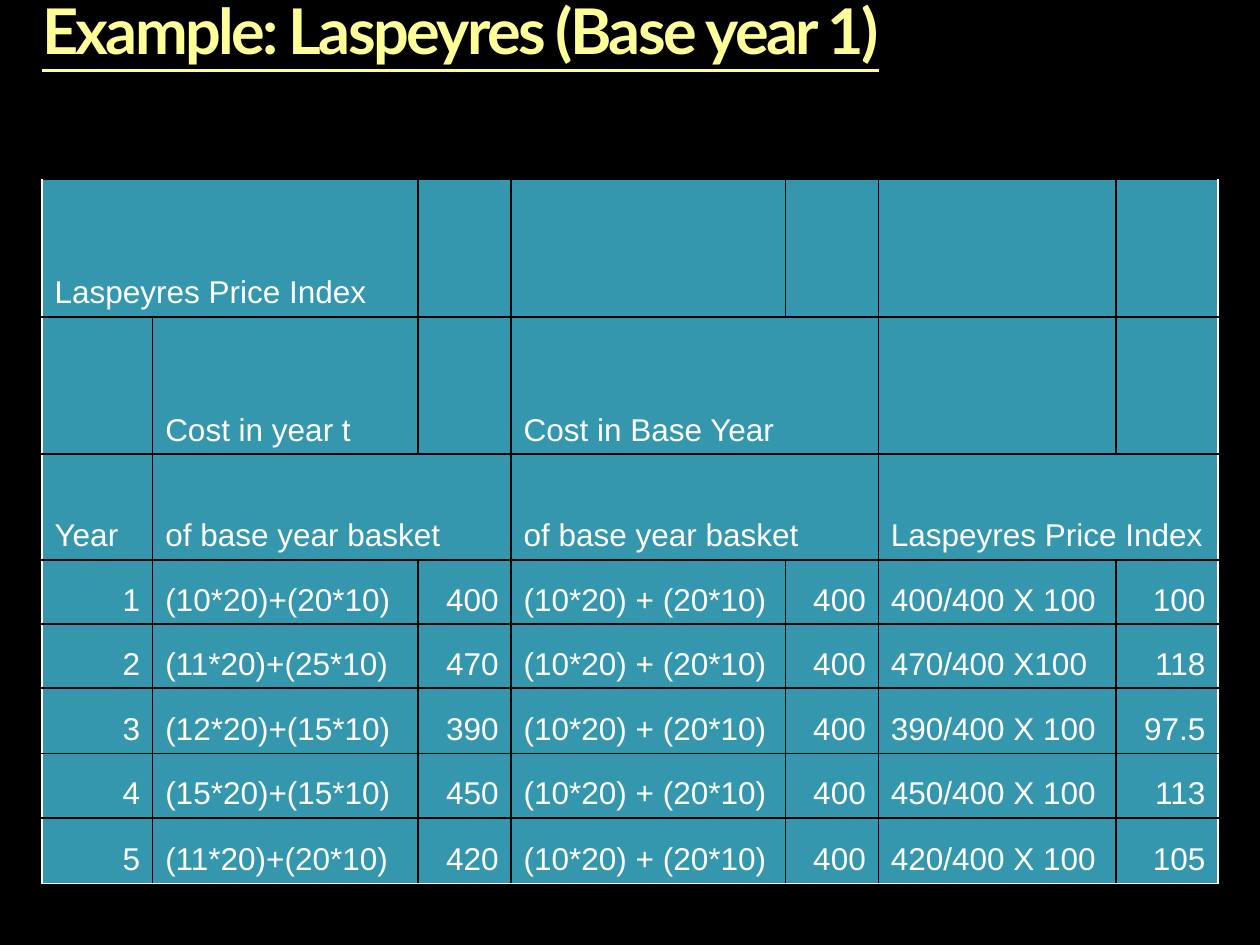
import pptx
import pptx.util
import pptx.dml.color
import pptx.enum.text
import pptx.oxml
import pptx.oxml.ns

WIDE, HIGH = pptx.util.Inches(10), pptx.util.Inches(7.5)
COLS = [0.88, 2.11, 0.74, 2.18, 0.74, 1.89, 0.81]
ROWS = [1.09, 1.09, 0.84, 0.51, 0.51, 0.52, 0.51, 0.52]
BASE = "(10*20) + (20*10)"
HEADS = [
    ["Laspeyres Price Index", "", "", "", "", "", ""],
    ["", "Cost in year t", "", "Cost in Base Year", "", "", ""],
    ["Year", "of base year basket", "", "of base year basket", "",
     "Laspeyres Price Index", ""],
]
YEARS = [
    ["1", "(10*20)+(20*10)", "400", BASE, "400", "400/400 X 100", "100"],
    ["2", "(11*20)+(25*10)", "470", BASE, "400", "470/400 X100", "118"],
    ["3", "(12*20)+(15*10)", "390", BASE, "400", "390/400 X 100", "97.5"],
    ["4", "(15*20)+(15*10)", "450", BASE, "400", "450/400 X 100", "113"],
    ["5", "(11*20)+(20*10)", "420", BASE, "400", "420/400 X 100", "105"],
]
PAIRS = [(0, 0), (1, 3), (2, 1), (2, 3), (2, 5)]  # cells two columns wide
GLOW = [(0, "FFFFB9"), (36, "FFFF99"), (86, "F6AE1E")]


def paint(fill, tint):
    fill.solid()
    fill.fore_color.rgb = pptx.dml.color.RGBColor.from_string(tint)


def node(text):
    head, tail = text.split(" ", 1) if " " in text else (text, "")
    return pptx.oxml.parse_xml(f"{head} {pptx.oxml.ns.nsdecls('a')} {tail}")


def shade(font, stops):
    """Give the font a gradient that runs from top to bottom."""
    font.fill.gradient()
    font.fill.gradient_angle = 270
    group = font._element.find(".//" + pptx.oxml.ns.qn("a:gsLst"))
    for old in list(group):
        group.remove(old)
    for share, tint in stops:
        group.append(node(f'<a:gs pos="{share * 1000}">'
                          f'<a:srgbClr val="{tint}"/></a:gs>'))


def edge(cell, side, tint):
    cell._tc.get_or_add_tcPr().append(node(
        f'<a:ln{side} w="12700"><a:solidFill><a:srgbClr val="{tint}"/>'
        f'</a:solidFill></a:ln{side}>'))


def title(slide, box, text):
    shape = slide.shapes.title
    shape.left, shape.top, shape.width, shape.height = box
    frame = shape.text_frame
    frame.margin_left = frame.margin_right = 0
    frame.margin_top = frame.margin_bottom = 0
    frame.word_wrap = True
    frame.vertical_anchor = pptx.enum.text.MSO_ANCHOR.TOP
    frame.auto_size = pptx.enum.text.MSO_AUTO_SIZE.SHAPE_TO_FIT_TEXT
    para = frame.paragraphs[0]
    para.alignment = pptx.enum.text.PP_ALIGN.LEFT
    para.line_spacing = 0.9
    run = para.add_run()
    run.text = text
    font = run.font
    font.name, font.size = "Lato", pptx.util.Pt(36)
    font.bold = font.underline = True
    shade(font, GLOW)
    font._element.set("spc", "-150")


def label(cell, text, right):
    cell.vertical_anchor = pptx.enum.text.MSO_ANCHOR.BOTTOM
    para = cell.text_frame.paragraphs[0]
    align = pptx.enum.text.PP_ALIGN
    para.alignment = align.RIGHT if right else align.LEFT
    run = para.add_run()
    run.text = text
    run.font.name, run.font.size = "Arial", pptx.util.Pt(18)
    paint(run.font.fill, "FFFFFF")


def index(slide, box):
    """Place the price index table in the box."""
    wide, high = box[2:]
    table = slide.shapes.add_table(len(ROWS), len(COLS), *box).table
    table.first_row = table.horz_banding = False
    for col, share in zip(table.columns, COLS):
        col.width = int(wide * share / sum(COLS))
    for row, share in zip(table.rows, ROWS):
        row.height = int(high * share / sum(ROWS))
    for r, c in PAIRS:
        table.cell(r, c).merge(table.cell(r, c + 1))
    for r, row in enumerate(HEADS + YEARS):
        for c, text in enumerate(row):
            cell = table.cell(r, c)
            end = c + (cell.span_width if cell.is_merge_origin else 1)
            rims = {"L": c == 0, "R": end == len(COLS),
                    "T": False, "B": r == len(ROWS) - 1}
            for side, rim in rims.items():
                edge(cell, side, "FFFFFF" if rim else "000000")
            paint(cell.fill, "3497AE")
            if text:
                label(cell, text, r >= len(HEADS) and c % 2 == 0)


def main():
    deck = pptx.Presentation()
    deck.slide_width, deck.slide_height = WIDE, HIGH
    slide = deck.slides.add_slide(deck.slide_layouts[5])
    paint(slide.background.fill, "000000")
    left = WIDE // 30
    span = WIDE - 2 * left
    title(slide, (left, 0, span, HIGH // 6),
          "Example: Laspeyres (Base year 1)")
    index(slide, (left, int(HIGH * 0.19), span, int(HIGH * 0.745)))
    deck.save("out.pptx")


if __name__ == "__main__":
    main()
